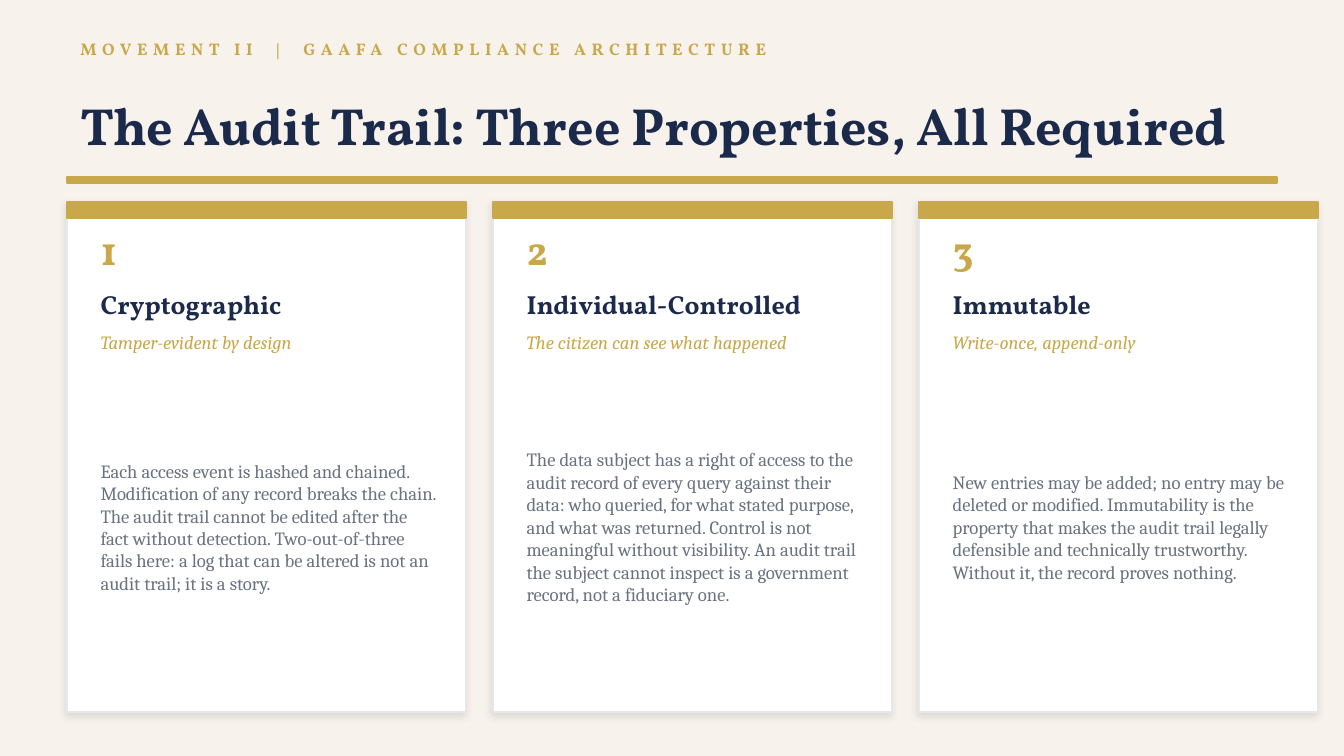
from lxml.etree import SubElement
from pptx import Presentation
from pptx.dml.color import RGBColor
from pptx.enum.shapes import MSO_SHAPE
from pptx.enum.text import MSO_ANCHOR
from pptx.oxml.ns import qn
from pptx.util import Inches, Pt

COLORS = {
    "background": "F7F3EC",
    "gold": "C9A84C",
    "navy": "1B2A4A",
    "gray": "6B7280",
    "white": "FFFFFF",
    "border": "E5E7EB",
    "shadow": "000000",
}
HEADING_FONT = "Vollkorn"
BODY_FONT = "Cambria"

MARGIN = 0.5
CARD_TOP = 1.5
CARD_WIDTH = 2.97
CARD_HEIGHT = 3.8
CARD_GAP = 0.2
CARD_PADDING = 0.15

CARDS = [
    (
        "Cryptographic",
        "Tamper-evident by design",
        "Each access event is hashed and chained. Modification of any record "
        "breaks the chain. The audit trail cannot be edited after the fact "
        "without detection. Two-out-of-three fails here: a log that can be "
        "altered is not an audit trail; it is a story.",
    ),
    (
        "Individual-Controlled",
        "The citizen can see what happened",
        "The data subject has a right of access to the audit record of every "
        "query against their data: who queried, for what stated purpose, and "
        "what was returned. Control is not meaningful without visibility. An "
        "audit trail the subject cannot inspect is a government record, not a "
        "fiduciary one.",
    ),
    (
        "Immutable",
        "Write-once, append-only",
        "New entries may be added; no entry may be deleted or modified. "
        "Immutability is the property that makes the audit trail legally "
        "defensible and technically trustworthy. Without it, the record "
        "proves nothing.",
    ),
]


class SlideBuilder:
    def __init__(self, slide):
        self.slide = slide

    def color(self, name):
        return RGBColor.from_string(COLORS[name])

    def background(self, color):
        fill = self.slide.background.fill
        fill.solid()
        fill.fore_color.rgb = self.color(color)

    def text(self, left, top, width, height, runs, size, color,
             font=HEADING_FONT, bold=False, italic=False):
        box = self.slide.shapes.add_textbox(
            Inches(left), Inches(top), Inches(width), Inches(height))
        frame = box.text_frame
        frame.word_wrap = True
        frame.vertical_anchor = MSO_ANCHOR.MIDDLE
        paragraph = frame.paragraphs[0]
        for content, spacing in runs:
            run = paragraph.add_run()
            run.text = content
            run.font.name = font
            run.font.size = Pt(size)
            run.font.bold = bold
            run.font.italic = italic
            run.font.color.rgb = self.color(color)
            if spacing:
                run.font._element.set("spc", str(spacing * 100))

    def rectangle(self, left, top, width, height, fill, line):
        shape = self.slide.shapes.add_shape(
            MSO_SHAPE.RECTANGLE,
            Inches(left), Inches(top), Inches(width), Inches(height))
        shape.fill.solid()
        shape.fill.fore_color.rgb = self.color(fill)
        shape.line.color.rgb = self.color(line)
        shape.line.width = Pt(1)
        shape.shadow.inherit = False
        return shape

    def drop_shadow(self, shape):
        effects = shape._element.spPr.find(qn("a:effectLst"))
        shadow = SubElement(
            effects, qn("a:outerShdw"), blurRad=str(Pt(4)), dist=str(Pt(2)),
            dir=str(135 * 60000), algn="bl", rotWithShape="0")
        color = SubElement(shadow, qn("a:srgbClr"), val=COLORS["shadow"])
        SubElement(color, qn("a:alpha"), val="10000")

    def card(self, left, number, title, tagline, body):
        panel = self.rectangle(
            left, CARD_TOP, CARD_WIDTH, CARD_HEIGHT, "white", "border")
        self.drop_shadow(panel)
        self.rectangle(left, CARD_TOP, CARD_WIDTH, 0.12, "gold", "gold")
        inner = left + CARD_PADDING
        self.text(inner, 1.65, 0.5, 0.4, [(str(number), 0)], 22, "gold",
                  bold=True)
        self.text(inner, 2.1, 2.7, 0.32, [(title, 0)], 14, "navy", bold=True)
        self.text(inner, 2.42, 2.7, 0.25, [(tagline, 0)], 10, "gold",
                  BODY_FONT, italic=True)
        self.text(inner, 2.72, 2.7, 2.4, [(body, 0)], 10, "gray", BODY_FONT)


def main():
    presentation = Presentation()
    presentation.slide_width = Inches(10)
    presentation.slide_height = Inches(5.625)
    slide = presentation.slides.add_slide(presentation.slide_layouts[6])
    builder = SlideBuilder(slide)

    builder.background("background")
    header = [("MOVEMENT II", 3), (" ", 8), ("|", 3), (" ", 8),
              ("GAAFA COMPLIANCE ARCHITECTURE", 3)]
    builder.text(MARGIN, 0.22, 9, 0.28, header, 9, "gold", bold=True)
    builder.text(MARGIN, 0.55, 9, 0.75,
                 [("The Audit Trail: Three Properties, All Required", 0)],
                 28, "navy", bold=True)
    builder.rectangle(MARGIN, 1.32, 9, 0.04, "gold", "gold")

    for index, content in enumerate(CARDS):
        left = MARGIN + index * (CARD_WIDTH + CARD_GAP)
        builder.card(left, index + 1, *content)

    presentation.save("out.pptx")


if __name__ == "__main__":
    main()
